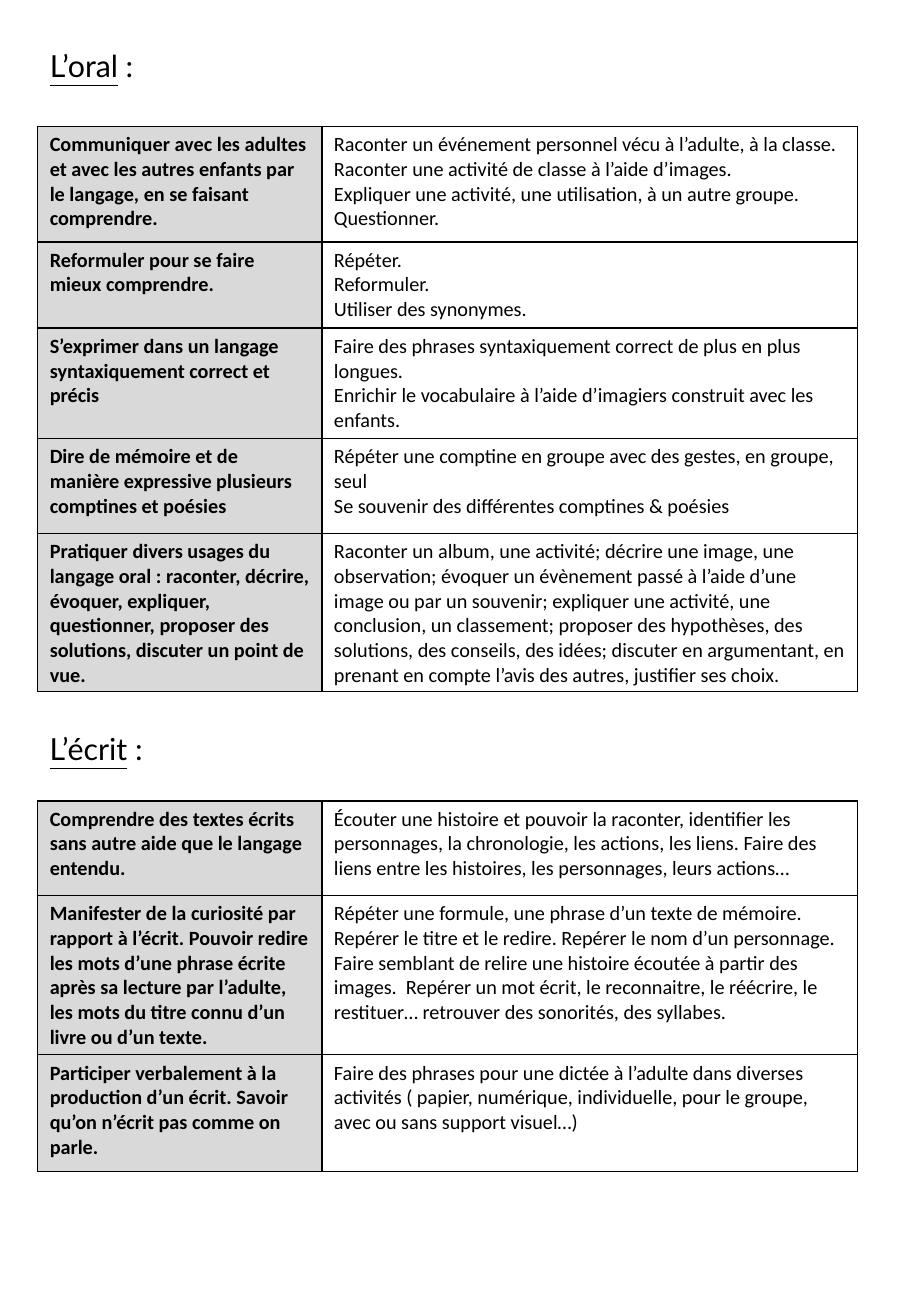
from lxml import etree
from pptx import Presentation
from pptx.dml.color import RGBColor
from pptx.enum.text import MSO_ANCHOR, MSO_AUTO_SIZE, PP_ALIGN
from pptx.oxml.ns import qn
from pptx.util import Inches, Pt

LEFT = PP_ALIGN.LEFT
TOP = MSO_ANCHOR.TOP
FIT_SHAPE = MSO_AUTO_SIZE.SHAPE_TO_FIT_TEXT
TITLE_ONLY = 5

COLORS = {"ink": "000000", "skill": "D9D9D9", "activity": "FFFFFF"}
HEADING_FORMAT = {"size": Pt(18), "bold": False}
CELL_FORMAT = {"size": Pt(12), "name": "Calibri"}
FRAME_FORMAT = {"word_wrap": True, "auto_size": FIT_SHAPE, "vertical_anchor": TOP}
MARGINS = {
    "margin_left": Inches(0.1),
    "margin_right": Inches(0.1),
    "margin_top": Inches(0.05),
    "margin_bottom": Inches(0.05),
}
PAGE_LEFT = 0.31
COLUMN_WIDTHS = [2.34, 4.41]
HEADING_WIDTH, HEADING_HEIGHT = 3.75, 0.4

ORAL_SKILLS = [
    (0.95, "Communiquer avec les adultes et avec les autres enfants par le langage, en se faisant comprendre.",
     ["Raconter un événement personnel vécu à l’adulte, à la classe.",
      "Raconter une activité de classe à l’aide d’images.",
      "Expliquer une activité, une utilisation, à un autre groupe.",
      "Questionner."]),
    (0.71, "Reformuler pour se faire mieux comprendre.",
     ["Répéter.", "Reformuler.", "Utiliser des synonymes."]),
    (0.91, "S’exprimer dans un langage syntaxiquement correct et précis",
     ["Faire des phrases syntaxiquement correct de plus en plus longues.",
      "Enrichir le vocabulaire à l’aide d’imagiers construit avec les enfants."]),
    (0.78, "Dire de mémoire et de manière expressive plusieurs comptines et poésies",
     ["Répéter une comptine en groupe avec des gestes, en groupe, seul",
      "Se souvenir des différentes comptines & poésies"]),
    (1.3, "Pratiquer divers usages du langage oral : raconter, décrire, évoquer, expliquer, "
     "questionner, proposer des solutions, discuter un point de vue.",
     ["Raconter un album, une activité; décrire une image, une observation; évoquer un évènement "
      "passé à l’aide d’une image ou par un souvenir; expliquer une activité, une conclusion, un "
      "classement; proposer des hypothèses, des solutions, des conseils, des idées; discuter en "
      "argumentant, en prenant en compte l’avis des autres, justifier ses choix."]),
]
WRITING_SKILLS = [
    (0.78, "Comprendre des textes écrits sans autre aide que le langage entendu.",
     ["Écouter une histoire et pouvoir la raconter, identifier les personnages, la chronologie, les "
      "actions, les liens. Faire des liens entre les histoires, les personnages, leurs actions…"]),
    (1.31, "Manifester de la curiosité par rapport à l’écrit. Pouvoir redire les mots d’une phrase "
     "écrite après sa lecture par l’adulte, les mots du titre connu d’un livre ou d’un texte.",
     ["Répéter une formule, une phrase d’un texte de mémoire. Repérer le titre et le redire. "
      "Repérer le nom d’un personnage.",
      "Faire semblant de relire une histoire écoutée à partir des images.  Repérer un mot écrit, le "
      "reconnaitre, le réécrire, le restituer… retrouver des sonorités, des syllabes."]),
    (0.96, "Participer verbalement à la production d’un écrit. Savoir qu’on n’écrit pas comme on parle.",
     ["Faire des phrases pour une dictée à l’adulte dans diverses activités ( papier, numérique, "
      "individuelle, pour le groupe, avec ou sans support visuel…)"]),
]


def apply_format(target, values):
    for attribute, value in values.items():
        setattr(target, attribute, value)


def rgb(name):
    return RGBColor.from_string(COLORS[name])


def write_heading(heading, word, left, top):
    apply_format(heading, {"left": Inches(left), "top": Inches(top),
                           "width": Inches(HEADING_WIDTH), "height": Inches(HEADING_HEIGHT)})
    frame = heading.text_frame
    apply_format(frame, {**FRAME_FORMAT, **MARGINS})
    line = frame.paragraphs[0]
    line.alignment = LEFT
    for text, font_name, underlined in [(word, "Lato", True), (" ", "Times New Roman", False), (":", "Lato", False)]:
        run = line.add_run()
        run.text = text
        apply_format(run.font, {**HEADING_FORMAT, "name": font_name, "underline": underlined})
        run.font.color.rgb = rgb("ink")


def add_borders(cell):
    properties = cell._tc.get_or_add_tcPr()
    for side in ("a:lnL", "a:lnR", "a:lnT", "a:lnB"):
        border = etree.SubElement(properties, qn(side), w=str(Pt(1)))
        fill = etree.SubElement(border, qn("a:solidFill"))
        etree.SubElement(fill, qn("a:srgbClr"), val=COLORS["ink"])


def write_cell(cell, lines, background, bold):
    add_borders(cell)
    cell.fill.solid()
    cell.fill.fore_color.rgb = rgb(background)
    apply_format(cell, {**MARGINS, "vertical_anchor": TOP})
    frame = cell.text_frame
    for index, text in enumerate(lines):
        paragraph = frame.add_paragraph() if index else frame.paragraphs[0]
        run = paragraph.add_run()
        run.text = text
        apply_format(run.font, {**CELL_FORMAT, "bold": bold})
        run.font.color.rgb = rgb("ink")


def add_skill_table(slide, skills, left, top):
    height = sum(row_height for row_height, _, _ in skills)
    table = slide.shapes.add_table(len(skills), len(COLUMN_WIDTHS), Inches(left), Inches(top),
                                   Inches(sum(COLUMN_WIDTHS)), Inches(height)).table
    apply_format(table, {"first_row": False, "horz_banding": False})
    for column, width in zip(table.columns, COLUMN_WIDTHS):
        column.width = Inches(width)
    for row, (row_height, skill, activities) in zip(table.rows, skills):
        row.height = Inches(row_height)
        write_cell(row.cells[0], [skill], "skill", True)
        write_cell(row.cells[1], activities, "activity", False)


def add_section(slide, heading, word, skills, left, top, table_offset):
    write_heading(heading, word, left, top)
    add_skill_table(slide, skills, left, top + table_offset)


def main():
    deck = Presentation()
    deck.slide_width, deck.slide_height = Inches(7.5), Inches(10.83)
    slide = deck.slides.add_slide(deck.slide_layouts[TITLE_ONLY])
    add_section(slide, slide.shapes.title, "L’oral", ORAL_SKILLS, PAGE_LEFT, 0.34, 0.7)
    writing_heading = slide.shapes.add_textbox(0, 0, 0, 0)
    add_section(slide, writing_heading, "L’écrit", WRITING_SKILLS, PAGE_LEFT, 5.96, 0.63)
    deck.save("out.pptx")


if __name__ == "__main__":
    main()
